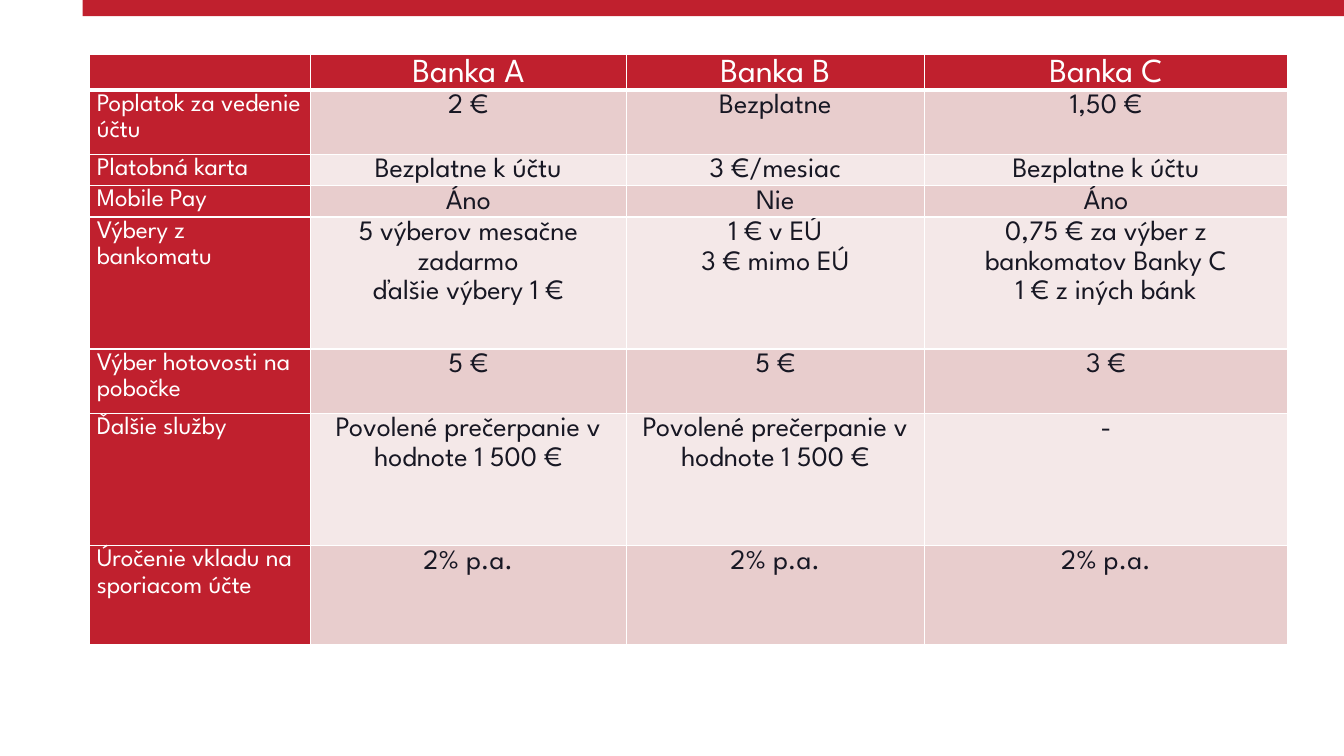
from lxml.etree import SubElement
from pptx import Presentation
from pptx.dml.color import RGBColor
from pptx.enum.shapes import MSO_SHAPE as Shape
from pptx.enum.text import PP_ALIGN as Align
from pptx.oxml.ns import qn
from pptx.util import Inches, Pt

COLORS = {"red": "C0202E", "white": "FFFFFF", "ink": "171723",
          "rose": "E8CDCD", "blush": "F4E8E8"}
FONT = "League Spartan"
COLUMN_WIDTHS = [2.19, 3.13, 2.96, 3.6]
ROW_HEIGHTS = [0.31, 0.64, 0.31, 0.31, 1.31, 0.64, 1.31, 0.98]
BANK_ROWS = [
    ["", "Banka A", "Banka B", "Banka C"],
    ["Poplatok za vedenie účtu", "2 €", "Bezplatne", "1,50 €"],
    ["Platobná karta", "Bezplatne k účtu", "3 €/mesiac", "Bezplatne k účtu"],
    ["Mobile Pay", "Áno", "Nie", "Áno"],
    ["Výbery z bankomatu", "5 výberov mesačne zadarmo\nďalšie výbery 1 €",
     "1 € v EÚ\n3 € mimo EÚ",
     "0,75 € za výber z bankomatov Banky C\n1 € z iných bánk"],
    ["Výber hotovosti na pobočke", "5 €", "5 €", "3 €"],
    ["Ďalšie služby", "Povolené prečerpanie v hodnote 1 500 €",
     "Povolené prečerpanie v hodnote 1 500 €", "-"],
    ["Úročenie vkladu na sporiacom účte", "2% p.a.", "2% p.a.", "2% p.a."],
]


def rgb(name):
    """Return the named colour."""
    return RGBColor.from_string(COLORS[name])


def add_top_band(page, deck):
    """Draw the red band along the top edge."""
    left = Inches(0.82)
    band = page.shapes.add_shape(Shape.RECTANGLE, left, 0,
                                 deck.slide_width - left, Inches(0.16))
    band.shadow.inherit = False
    band.fill.solid()
    band.fill.fore_color.rgb = rgb("red")
    band.line.fill.background()


def add_borders(cell, bottom_width):
    """Give a cell white borders."""
    properties = cell._tc.get_or_add_tcPr()
    for side, width in (("L", 1), ("R", 1), ("T", 1), ("B", bottom_width)):
        line = SubElement(properties, qn(f"a:ln{side}"), w=str(Pt(width)))
        fill = SubElement(line, qn("a:solidFill"))
        SubElement(fill, qn("a:srgbClr"), val=COLORS["white"])


def fill_cell(cell, text, row, column):
    """Style one cell by its place in the table and write its text."""
    is_header, is_label = row == 0, column == 0
    add_borders(cell, 3 if is_header else 1)
    cell.margin_left = cell.margin_right = Inches(0.07)
    cell.margin_top = cell.margin_bottom = 0
    band = "rose" if row % 2 else "blush"
    cell.fill.solid()
    cell.fill.fore_color.rgb = rgb("red" if is_header or is_label else band)
    para = cell.text_frame.paragraphs[0]
    para.text = text
    para.alignment = Align.LEFT if is_label else Align.CENTER
    para.line_spacing = 1.15
    para.space_after = Pt(10)
    for span in para.runs:
        span.font.name = FONT
        span.font.size = Pt(24 if is_header else 18 if is_label else 20)
        span.font.bold = False
        span.font.color.rgb = rgb("white" if is_header or is_label else "ink")


def add_bank_table(page):
    """Add the table that compares the three banks."""
    frame = page.shapes.add_table(
        len(ROW_HEIGHTS), len(COLUMN_WIDTHS), Inches(0.89), Inches(0.54),
        Inches(sum(COLUMN_WIDTHS)), Inches(sum(ROW_HEIGHTS)))
    table = frame.table
    table.first_row = table.horz_banding = False
    for column, width in zip(table.columns, COLUMN_WIDTHS):
        column.width = Inches(width)
    for row, height in zip(table.rows, ROW_HEIGHTS):
        row.height = Inches(height)
    for row, texts in enumerate(BANK_ROWS):
        for column, text in enumerate(texts):
            fill_cell(table.cell(row, column), text, row, column)


def main():
    """Build the slide and save the deck."""
    deck = Presentation()
    deck.slide_width, deck.slide_height = Inches(13.33), Inches(7.5)
    page = deck.slides.add_slide(deck.slide_layouts[6])
    add_top_band(page, deck)
    add_bank_table(page)
    deck.save("out.pptx")


if __name__ == "__main__":
    main()
